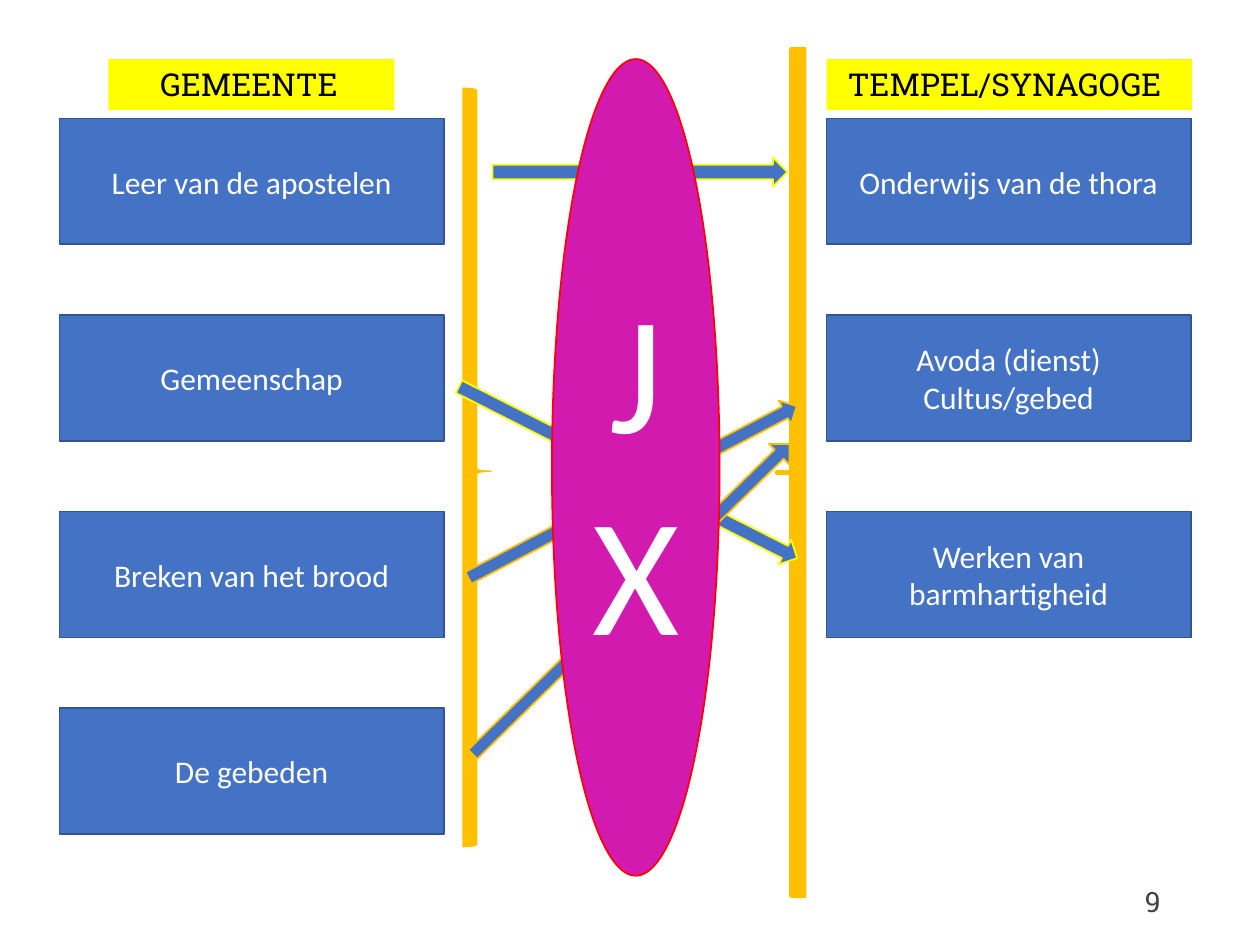
from dataclasses import dataclass
from typing import Optional

from pptx import Presentation
from pptx.dml.color import RGBColor
from pptx.enum import shapes, text
from pptx.util import Pt

KIND = shapes.MSO_SHAPE
ALIGN = text.PP_ALIGN
MID = text.MSO_ANCHOR.MIDDLE


@dataclass(frozen=True)
class Theme:
    blue: str = "4472C4"
    edge: str = "325491"
    yellow: str = "FFFF00"
    gold: str = "FFC000"
    pink: str = "D21AAF"
    red: str = "FF0000"
    white: str = "FFFFFF"
    black: str = "000000"
    gray: str = "424242"
    sans: str = "Calibri"
    slab: str = "Roboto Slab"
    body: float = 18
    small: float = 16
    huge: float = 96


@dataclass(frozen=True)
class Box:
    left: float
    top: float
    width: float
    height: float

    def size(self) -> tuple:
        return Pt(self.left), Pt(self.top), Pt(self.width), Pt(self.height)


@dataclass(frozen=True)
class Column:
    left: float
    width: float
    labels: tuple


@dataclass(frozen=True)
class Head:
    slot: int
    label: str
    box: Box
    inset: float


@dataclass(frozen=True)
class Form:
    kind: KIND
    box: Box
    fill: str
    line: str
    weight: float = 1
    turn: float = 0
    adjust: Optional[tuple] = None


THEME = Theme()
TOP, STEP, TALL = 67.7, 112.3, 72

COLUMNS = (
    Column(34, 219.6, ("Leer van de apostelen", "Gemeenschap",
                       "Breken van het brood", "De gebeden")),
    Column(472.3, 208.1, ("Onderwijs van de thora",
                          "Avoda (dienst)\nCultus/gebed",
                          "Werken van barmhartigheid")),
)
HEADS = (
    Head(1, "GEMEENTE", Box(62, 33.8, 163.4, 29), 29.5),
    Head(3, "TEMPEL/SYNAGOGE", Box(472.3, 33.8, 208.8, 29), 12.2),
)
BRACES = (
    Form(KIND.RIGHT_BRACE, Box(264.2, 50.4, 16.6, 433.4), THEME.gold,
         THEME.gold, 0.75, adjust=(0.083, 0.505)),
    Form(KIND.LEFT_BRACE, Box(444.2, 28.1, 16.6, 483.8), THEME.gold,
         THEME.gold, 3, adjust=(0, 0.5)),
)
ARROWS = (
    Form(KIND.RIGHT_ARROW, Box(281.5, 90, 168.5, 16.6), THEME.blue,
         THEME.yellow),
    Form(KIND.RIGHT_ARROW, Box(250.6, 262.1, 216.7, 15.8), THEME.blue,
         THEME.yellow, turn=26.9),
    Form(KIND.RIGHT_ARROW, Box(255.6, 273.6, 211.7, 15.1), THEME.blue,
         THEME.gold, turn=332.4),
    Form(KIND.RIGHT_ARROW, Box(234, 334.1, 253.4, 16.6), THEME.blue,
         THEME.gold, turn=315.6, adjust=(0.437, 0.5)),
)
OVAL = Form(KIND.OVAL, Box(315.4, 33.8, 95.8, 466.6), THEME.pink, THEME.red)


def write(shape, label: str, font: str, size: float, color: str,
          align: ALIGN, anchor=MID) -> None:
    frame = shape.text_frame
    frame.text = label
    frame.word_wrap = True
    frame.vertical_anchor = anchor
    for para in frame.paragraphs:
        para.alignment = align
        para.space_before = Pt(0)
        for run in para.runs:
            run.font.name = font
            run.font.size = Pt(size)
            run.font.bold = False
            run.font.color.rgb = RGBColor.from_string(color)


def draw(slide, form: Form):
    shape = slide.shapes.add_shape(form.kind, *form.box.size())
    shape.shadow.inherit = False
    shape.rotation = form.turn
    shape.fill.solid()
    shape.fill.fore_color.rgb = RGBColor.from_string(form.fill)
    shape.line.color.rgb = RGBColor.from_string(form.line)
    shape.line.width = Pt(form.weight)
    for i, value in enumerate(form.adjust or ()):
        shape.adjustments[i] = value
    return shape


def stack(slide, col: Column) -> None:
    for row, label in enumerate(col.labels):
        box = Box(col.left, TOP + row * STEP, col.width, TALL)
        shape = draw(slide, Form(KIND.RECTANGLE, box, THEME.blue, THEME.edge))
        write(shape, label, THEME.sans, THEME.body, THEME.white, ALIGN.CENTER)


def title(slide, head: Head) -> None:
    hold = next(p for p in slide.placeholders
                if p.placeholder_format.idx == head.slot)
    hold.left, hold.top, hold.width, hold.height = head.box.size()
    hold.fill.solid()
    hold.fill.fore_color.rgb = RGBColor.from_string(THEME.yellow)
    write(hold, head.label, THEME.slab, THEME.body, THEME.black,
          ALIGN.LEFT, text.MSO_ANCHOR.TOP)
    frame = hold.text_frame
    frame.auto_size = text.MSO_AUTO_SIZE.NONE
    frame.margin_left, frame.margin_right = Pt(head.inset), Pt(0)


def main() -> None:
    deck = Presentation()
    deck.slide_width, deck.slide_height = Pt(720), Pt(540)
    # Comparison layout: one heading slot for each column
    slide = deck.slides.add_slide(deck.slide_layouts[4])

    # Headings; unused slots go
    for head in HEADS:
        title(slide, head)
    for hold in list(slide.placeholders):
        if not hold.text_frame.text:
            hold.element.getparent().remove(hold.element)

    # Columns of practices
    for col in COLUMNS:
        stack(slide, col)

    # Braces and the arrows between them
    for form in BRACES + ARROWS:
        draw(slide, form)

    # Central oval, its letters wrapping one below the other
    write(draw(slide, OVAL), "JX", THEME.sans, THEME.huge, THEME.white,
          ALIGN.CENTER)

    # Page number
    page = slide.shapes.add_textbox(*Box(508.3, 500.4, 162, 28.8).size())
    write(page, "9", THEME.slab, THEME.small, THEME.gray, ALIGN.RIGHT)

    deck.save("out.pptx")


if __name__ == "__main__":
    main()
